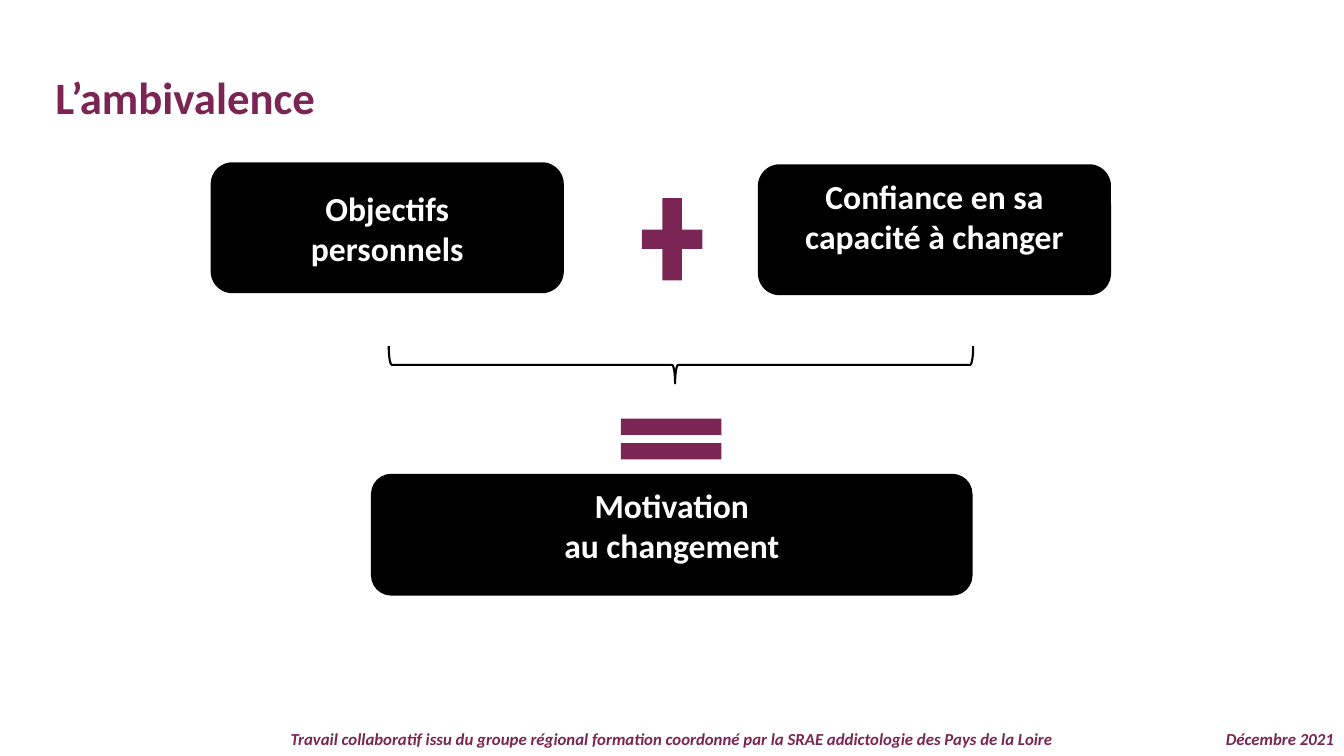
from pptx import Presentation
from pptx.dml.color import RGBColor
from pptx.enum.shapes import MSO_SHAPE
from pptx.enum.text import MSO_ANCHOR, PP_ALIGN
from pptx.util import Cm, Pt

PLUM, BLACK, WHITE = "7A2553", "000000", "FFFFFF"


def color(code):
    return RGBColor.from_string(code)


def write(frame, text, size, code, align, anchor=MSO_ANCHOR.TOP, italic=False):
    """Fill a text frame, one paragraph per line, in bold Calibri."""
    frame.word_wrap = True
    frame.vertical_anchor = anchor
    frame.text = text
    for para in frame.paragraphs:
        para.alignment = align
        font = para.font
        font.name, font.size = "Calibri", Pt(size)
        font.bold, font.italic = True, italic
        font.color.rgb = color(code)


def add_shape(slide, kind, box, fill=None):
    shape = slide.shapes.add_shape(kind, *map(Cm, box))
    shape.shadow.inherit = False
    if fill:
        shape.fill.solid()
        shape.fill.fore_color.rgb = color(fill)
        shape.line.fill.background()
    else:
        shape.fill.background()
    return shape


def add_card(slide, text, box, anchor=MSO_ANCHOR.TOP):
    card = add_shape(slide, MSO_SHAPE.ROUNDED_RECTANGLE, box, BLACK)
    write(card.text_frame, text, 24, WHITE, PP_ALIGN.CENTER, anchor)


def add_brace(slide, box):
    """Draw a brace turned to open upward."""
    brace = add_shape(slide, MSO_SHAPE.RIGHT_BRACE, box)
    brace.rotation = 90
    brace.adjustments[0] = 0.083
    brace.adjustments[1] = 0.51
    brace.line.color.rgb = color(BLACK)
    brace.line.width = Pt(1.5)


def add_note(slide, text, left, width, align):
    note = slide.shapes.add_textbox(Cm(left), Cm(18.29), Cm(width), Cm(0.76))
    write(note.text_frame, text, 12, PLUM, align, italic=True)
    note.text_frame.paragraphs[0].line_spacing = 0.9


def set_title(slide, text):
    title = slide.shapes.title
    title.left, title.top = Cm(1.14), Cm(1.63)
    title.width, title.height = Cm(32.94), Cm(1.63)
    write(title.text_frame, text, 32, PLUM, PP_ALIGN.LEFT)


def main():
    deck = Presentation()
    deck.slide_width, deck.slide_height = Cm(33.87), Cm(19.05)
    slide = deck.slides.add_slide(deck.slide_layouts[5])

    set_title(slide, "L’ambivalence")
    add_note(slide, "Travail collaboratif issu du groupe régional formation "
             "coordonné par la SRAE addictologie des Pays de la Loire",
             0, 33.87, PP_ALIGN.CENTER)
    add_note(slide, "Décembre 2021", 29.55, 4.32, PP_ALIGN.RIGHT)

    add_card(slide, "Confiance en sa capacité à changer", (19.1, 4.14, 8.9, 3.3))
    add_card(slide, "Motivation\nau changement", (9.35, 11.94, 15.16, 3.07))
    add_card(slide, "Objectifs\npersonnels", (5.31, 4.09, 8.9, 3.3),
             MSO_ANCHOR.MIDDLE)
    add_shape(slide, MSO_SHAPE.MATH_PLUS, (15.9, 4.62, 2.08, 2.82), PLUM)
    add_shape(slide, MSO_SHAPE.MATH_EQUAL, (15.19, 10.19, 3.45, 1.75), PLUM)
    add_brace(slide, (16.69, 1.83, 0.94, 14.73))

    deck.save("out.pptx")


if __name__ == "__main__":
    main()
